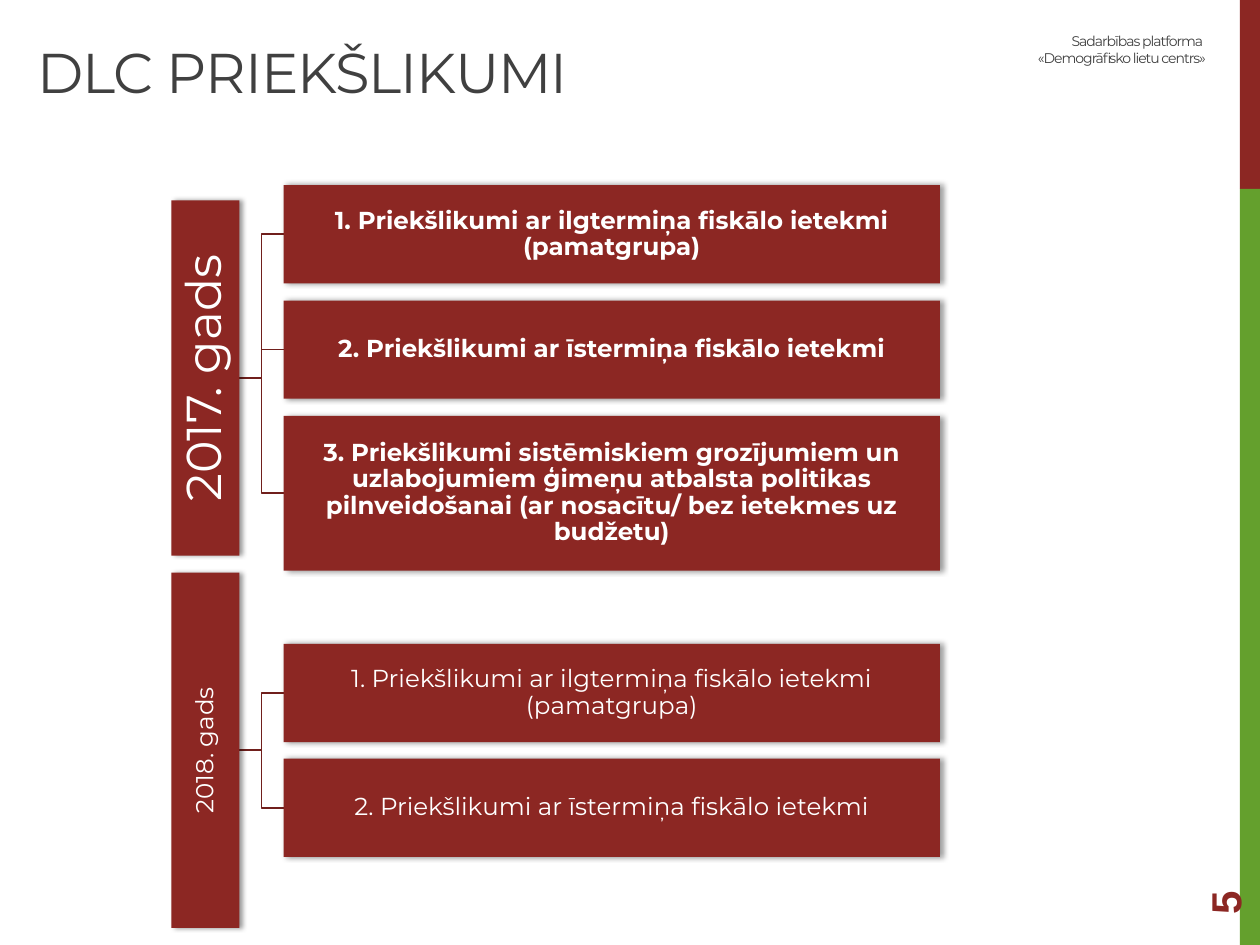
from pptx import Presentation
from pptx.dml.color import RGBColor
from pptx.enum.shapes import MSO_SHAPE as Shape
from pptx.enum.text import MSO_ANCHOR as Anchor, PP_ALIGN as Align
from pptx.oxml import parse_xml
from pptx.oxml.ns import nsdecls
from pptx.util import Inches, Pt

RED = RGBColor(0x8C, 0x27, 0x23)
DARK = RGBColor(0x70, 0x1F, 0x1C)
GREEN = RGBColor(0x64, 0xA0, 0x2D)
GREY = RGBColor(0x40, 0x40, 0x40)
WHITE = RGBColor(0xFF, 0xFF, 0xFF)

BAR, ROW, TALL = 0.54, 0.78, 1.23   # year bar width, card heights
LONG, LINK = 2.82, 0.35             # year bar length, branch width

TERMS = [("1. Priekšlikumi ar ilgtermiņa fiskālo ietekmi (pamatgrupa)", ROW),
         ("2. Priekšlikumi ar īstermiņa fiskālo ietekmi", ROW)]
REFORM = ("3. Priekšlikumi sistēmiskiem grozījumiem un uzlabojumiem "
          "ģimeņu atbalsta politikas pilnveidošanai "
          "(ar nosacītu/ bez ietekmes uz budžetu)", TALL)


def write(shape, text, size, color, align=Align.LEFT, anchor=Anchor.TOP,
          bold=False, face="Montserrat", track=None):
    frame = shape.text_frame
    frame.word_wrap = True
    frame.vertical_anchor = anchor
    frame.text = text
    para = frame.paragraphs[0]
    para.alignment = align
    for run in para.runs:
        font = run.font
        font.name, font.size, font.bold = face, Pt(size), bold
        font.color.rgb = color
        if track:
            run._r.get_or_add_rPr().set("spc", str(track))
    return frame


def block(slide, x, y, w, h, color):
    shape = slide.shapes.add_shape(
        Shape.RECTANGLE, Inches(x), Inches(y), Inches(w), Inches(h))
    shape.fill.solid()
    shape.fill.fore_color.rgb = color
    shape.line.fill.background()
    shape.shadow.inherit = False
    return shape


def label(slide, x, y, w, h, text, size, color, **style):
    box = slide.shapes.add_textbox(Inches(x), Inches(y), Inches(w), Inches(h))
    write(box, text, size, color, **style)
    return box


def card(slide, x, y, w, h, text, size, bold=False, inset=0.01):
    shape = block(slide, x, y, w, h, RED)
    # Soft shadow to the right
    effects = shape._element.spPr.find(
        "{http://schemas.openxmlformats.org/drawingml/2006/main}effectLst")
    effects.append(parse_xml(
        f'<a:outerShdw {nsdecls("a")} blurRad="{Pt(3.1)}" dist="{Pt(1.8)}" '
        'dir="0" rotWithShape="0"><a:srgbClr val="000000">'
        '<a:alpha val="40000"/></a:srgbClr></a:outerShdw>'))
    frame = write(shape, text, size, WHITE, Align.CENTER, Anchor.MIDDLE, bold)
    frame.margin_left = frame.margin_right = Inches(inset)
    frame.margin_top = frame.margin_bottom = Inches(inset)
    frame.paragraphs[0].line_spacing = 0.9
    return shape


def branch(slide, x, start, end):
    points = [(x + LINK / 2, start), (x + LINK / 2, end), (x + LINK, end)]
    path = slide.shapes.build_freeform(Inches(x), Inches(start))
    path.add_line_segments([(Inches(a), Inches(b)) for a, b in points],
                           close=False)
    line = path.convert_to_shape()
    line.fill.background()
    line.line.color.rgb = DARK
    line.line.width = Pt(1)
    line.shadow.inherit = False


def tree(slide, x, y, w, h, year, size, items, bold=False, inset=0.01):
    mid = y + h / 2
    left = x + BAR + LINK
    gap = (h - sum(tall for _, tall in items)) / (len(items) - 1)
    # Branches, each to the middle of its card
    tops, top = [], y
    for _, tall in items:
        tops.append(top)
        branch(slide, x + BAR, mid, top + tall / 2)
        top += tall + gap
    # Year bar, turned to read upwards
    bar = card(slide, x + (BAR - LONG) / 2, mid - BAR / 2, LONG, BAR,
               year, size, inset=inset)
    bar.rotation = 270
    # Cards
    for top, (text, tall) in zip(tops, items):
        card(slide, left, top, x + w - left, tall, text, 14, bold)


def stripe(slide, x, y, w, h):
    split = h / 5
    block(slide, x, y, w, split, RED)
    block(slide, x, y + split, w, h - split, GREEN)


def header(slide, x, y, w, h):
    label(slide, x + w - 1.99, y + 0.08, 1.99, 0.35,
          "Sadarbības platforma \v«Demogrāfisko lietu centrs»", 8, GREY,
          align=Align.RIGHT, track=-60)
    label(slide, x, y, 6.33, h, "DLC PRIEKŠLIKUMI", 32, GREY,
          anchor=Anchor.BOTTOM, track=-60)


def number(slide, x, y, w, h):
    box = label(slide, x, y, w, h, "5", 24, RED, anchor=Anchor.MIDDLE,
                bold=True, face="Arial")
    box.rotation = 270


def main():
    deck = Presentation()
    deck.slide_width, deck.slide_height = Inches(10), Inches(7.5)
    slide = deck.slides.add_slide(deck.slide_layouts[6])
    stripe(slide, 9.84, 0, 0.16, 7.5)
    header(slide, 0.2, 0.13, 9.47, 0.75)
    number(slide, 9, 6.44, 1.44, 0.4)
    tree(slide, 1.36, 1.47, 6.1, 3.06, "2017. gads", 28, TERMS + [REFORM],
         bold=True, inset=0.02)
    tree(slide, 1.36, 5.11, 6.1, 1.69, "2018. gads", 14, TERMS)
    deck.save("out.pptx")


if __name__ == "__main__":
    main()
